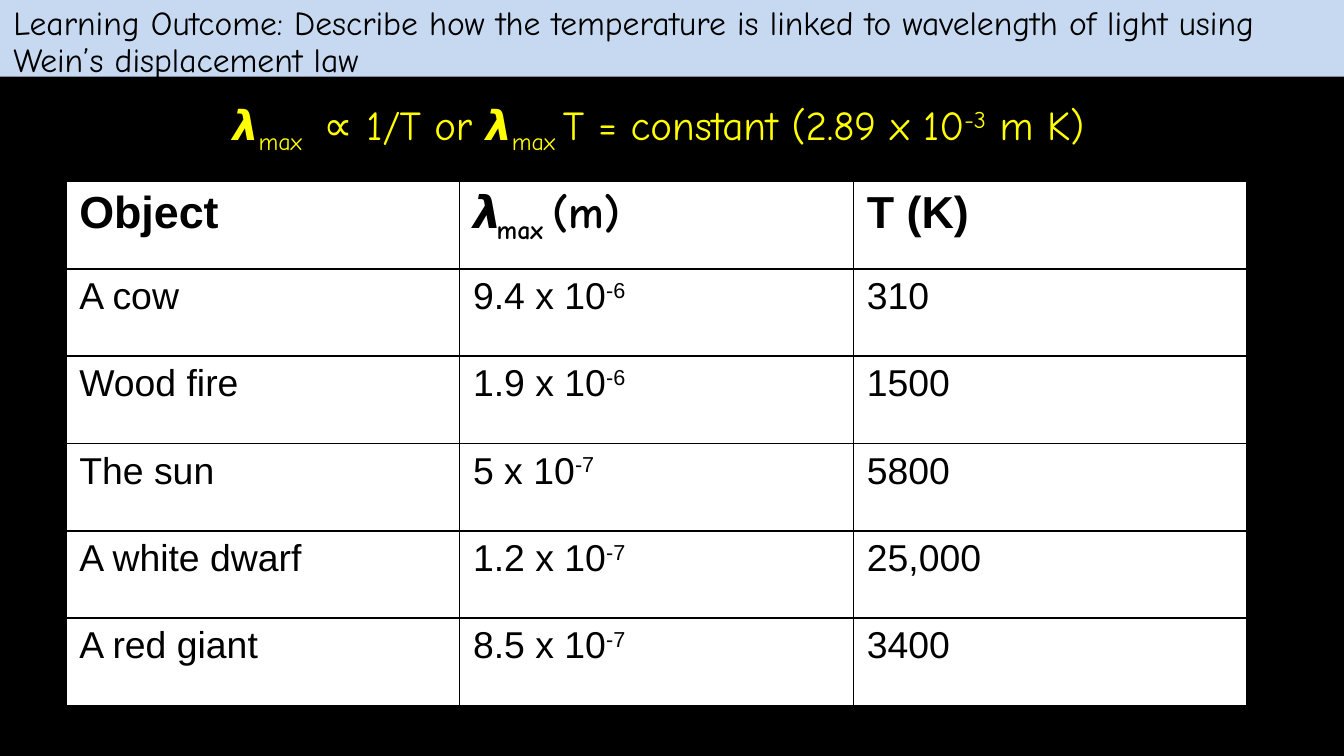
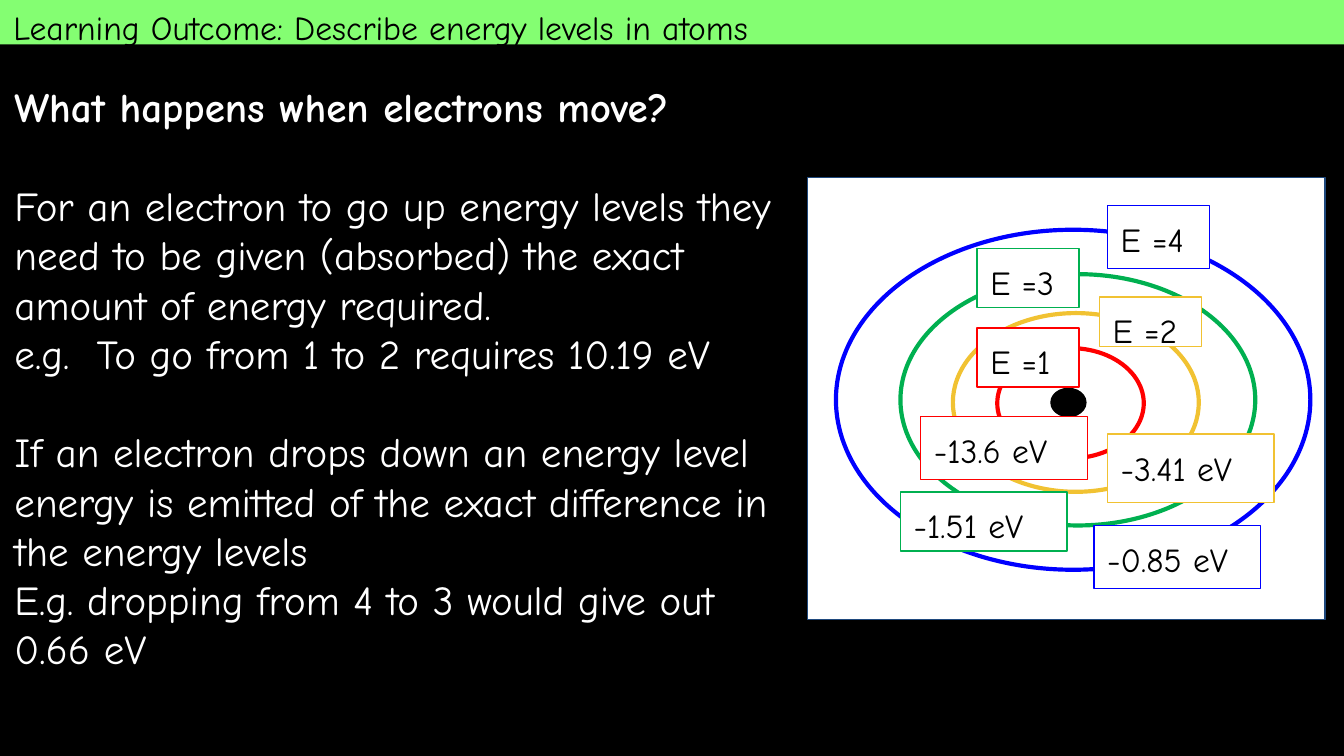
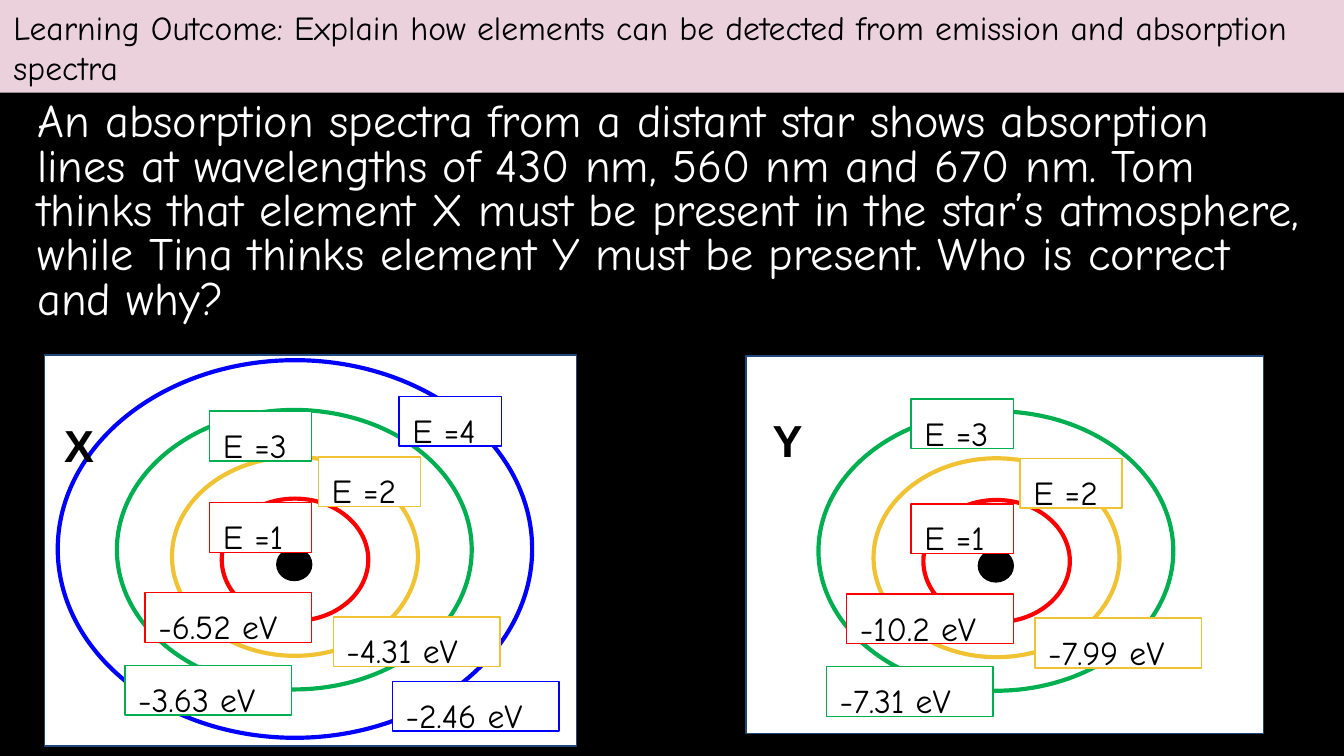
import pptx
import pptx.dml.color
import pptx.enum.shapes
import pptx.enum.text
import pptx.oxml
import pptx.oxml.ns
import pptx.util

SCALE = 9144
COMIC, ARIAL = "Comic Neue", "Arial"
BLACK, WHITE, YELLOW, NAVY = "000000", "FFFFFF", "FFFF00", "1F497D"
HUES = ["FF0000", "F1C232", "00B050", "0000FF"]
SUB, SUP = -25000, 30000
RECT = pptx.enum.shapes.MSO_SHAPE.RECTANGLE
OVAL = pptx.enum.shapes.MSO_SHAPE.OVAL
LEFT = pptx.enum.text.PP_ALIGN.LEFT
CENTER = pptx.enum.text.PP_ALIGN.CENTER

LAMBDA = [("𝞴", 0), ("max ", SUB)]
FORMULA = LAMBDA + [(" ∝ 1/T\tor 𝞴", 0), ("max ", SUB),
                    ("T = constant (2.89 x 10", 0), ("-3", SUP), (" m K)", 0)]
OBJECTS = [("A cow", "9.4", "-6", "310"), ("Wood fire", "1.9", "-6", "1500"),
           ("The sun", "5", "-7", "5800"), ("A white dwarf", "1.2", "-7", "25,000"),
           ("A red giant", "8.5", "-7", "3400")]
MOVES = [
    "What happens when electrons move?",
    "For an electron to go up energy levels they need to be given (absorbed) "
    "the exact amount of energy required.",
    "e.g.  To go from 1 to 2 requires 10.19 eV",
    "If an electron drops down an energy level energy is emitted of the exact "
    "difference in the energy levels",
    "E.g. dropping from 4 to 3 would give out 0.66 eV",
]
PUZZLE = (
    "An absorption spectra from a distant star shows absorption lines at "
    "wavelengths of 430 nm, 560 nm and 670 nm. Tom thinks that element X must "
    "be present in the star’s atmosphere, while Tina thinks element Y must be "
    "present. Who is correct and why?")

# MARK


def px(*sizes):
    return [pptx.util.Emu(size * SCALE) for size in sizes]


def hue(code):
    return pptx.dml.color.RGBColor.from_string(code)


def paint(item, code):
    item.fill.solid()
    item.fill.fore_color.rgb = hue(code)


def style(para, size, code=BLACK, face=COMIC, bold=False, align=LEFT):
    para.alignment = align
    font = para.font
    font.name, font.size, font.bold = face, pptx.util.Pt(size), bold
    font.color.rgb = hue(code)


def write(para, runs):
    for words, shift in runs:
        run = para.add_run()
        run.text = words
        if shift:
            run._r.get_or_add_rPr().set("baseline", str(shift))


def frame(shape, pad=10):
    area = shape.text_frame
    area.word_wrap = True
    area.auto_size = pptx.enum.text.MSO_AUTO_SIZE.NONE
    area.vertical_anchor = pptx.enum.text.MSO_ANCHOR.TOP
    area.margin_left, area.margin_right = px(10, 10)
    area.margin_top, area.margin_bottom = px(pad, pad)
    return area


def note(slide, box, runs, size, pad=10, **looks):
    para = frame(slide.shapes.add_textbox(*px(*box)), pad).paragraphs[0]
    write(para, runs)
    style(para, size, **looks)
    return para


def draw(slide, kind, box, line, width=0.75, fill=None):
    shape = slide.shapes.add_shape(kind, *px(*box))
    shape.shadow.inherit = False
    shape.line.color.rgb = hue(line)
    shape.line.width = pptx.util.Pt(width)
    if fill:
        paint(shape, fill)
    else:
        shape.fill.background()
    return shape


def start(deck, aim, height, code, gap=1.0):
    slide = deck.slides.add_slide(deck.slide_layouts[5])
    band = slide.shapes.title
    band.left, band.top, band.width, band.height = px(0, 0, 1000, height)
    paint(band, code)
    para = frame(band, 5).paragraphs[0]
    write(para, [("Learning Outcome: " + aim, 0)])
    style(para, 18)
    para.line_spacing = gap
    return slide


def border(cell):
    props = cell._tc.get_or_add_tcPr()
    for rank, side in enumerate(["lnL", "lnR", "lnT", "lnB"]):
        props.insert(rank, pptx.oxml.parse_xml(
            f'<a:{side} {pptx.oxml.ns.nsdecls("a")} w="12700"><a:solidFill>'
            f'<a:srgbClr val="{BLACK}"/></a:solidFill></a:{side}>'))


def grid(slide, box):
    rows = [[[("Object", 0)], LAMBDA + [("(m)", 0)], [("T (K)", 0)]]]
    for name, base, power, heat in OBJECTS:
        rows.append([[(name, 0)], [(base + " x 10", 0), (power, SUP)], [(heat, 0)]])
    table = slide.shapes.add_table(len(rows), 3, *px(*box)).table
    table.first_row = table.horz_banding = False
    for r, row in enumerate(rows):
        for c, runs in enumerate(row):
            cell = table.cell(r, c)
            paint(cell, WHITE)
            border(cell)
            para = cell.text_frame.paragraphs[0]
            write(para, runs)
            head = r == 0
            style(para, 24 if head else 20, bold=head,
                  face=COMIC if head and c == 1 else ARIAL)


def label(slide, box, words, line):
    para = frame(draw(slide, RECT, box, line, fill=WHITE)).paragraphs[0]
    write(para, [(words, 0)])
    style(para, 18)


def atom(slide, box, core, levels, powers):
    left, top, _, _ = box

    def place(x, y, wide, high):
        return left + x, top + y, wide, high

    draw(slide, RECT, box, NAVY, fill=WHITE)
    draw(slide, OVAL, place(*core), BLACK, fill=BLACK)
    shells = list(zip(levels, powers, HUES))
    for (ring, _, _), _, line in shells:
        draw(slide, OVAL, place(*ring), line, 2.25)
    for rank, ((_, tag, mark), power, line) in enumerate(shells, 1):
        x, y, high = tag
        label(slide, place(x, y, 76, high), f"E ={rank}", line)
        x, y, high = mark
        label(slide, place(x, y, 124, high), f"{power} eV", line)


def wien(deck):
    slide = start(deck, "Describe how the temperature is linked to wavelength of "
                  "light using Wein’s displacement law", 57, "C6D9F1", 0.9)
    note(slide, (20, 64, 940, 37), FORMULA, 22, code=YELLOW, align=CENTER)
    grid(slide, (49, 135, 879, 390))


def jumps(deck):
    slide = start(deck, "Describe energy levels in atoms", 33, "84FE72")
    area = frame(slide.shapes.add_textbox(*px(1, 51, 600, 473)))
    for rank, words in enumerate(MOVES):
        para = area.add_paragraph() if rank else area.paragraphs[0]
        write(para, [(words, 0)])
        style(para, 22, WHITE, bold=rank == 0)
        if rank in (1, 3):
            para.space_before = pptx.util.Pt(26.4)
    levels = [
        ((141, 127, 109, 82), (126, 112, 44), (84, 178, 47)),
        ((108, 101, 183, 133), (217, 89, 37), (223, 191, 51)),
        ((69, 72, 264, 187), (126, 53, 44), (69, 234, 44)),
        ((21, 39, 353, 253), (223, 21, 47), (213, 259, 47)),
    ]
    atom(slide, (601, 132, 385, 329), (181, 157, 26, 21), levels,
         ["-13.6", "-3.41", "-1.51", "-0.85"])


def stars(deck):
    slide = start(deck, "Explain how elements can be detected from emission and "
                  "absorption spectra", 69, "EAD1DC")
    para = note(slide, (18, 71, 963, 168), [(PUZZLE, 0)], 24.8, 5, code=WHITE)
    para.line_spacing = 0.8
    core = (173, 144, 26, 24)
    inner = [
        ((132, 107, 109, 91), (123, 110, 37), (75, 177, 37)),
        ((95, 76, 183, 148), (204, 76, 37), (215, 195, 37)),
    ]
    ring, mark = (54, 41, 264, 208), (60, 231, 37)
    outer = ((10, 4, 353, 281), (264, 31, 37), (259, 243, 37))
    atom(slide, (33, 264, 396, 291), core,
         inner + [(ring, (123, 42, 37), mark), outer],
         ["-6.52", "-4.31", "-3.63", "-2.46"])
    atom(slide, (555, 265, 385, 281), core,
         inner + [(ring, (123, 32, 37), mark)],
         ["-10.2", "-7.99", "-7.31"])
    for name, x, y in [("X", 38, 301), ("Y", 565, 297)]:
        note(slide, (x, y, 76, 53), [(name, 0)], 24, face=ARIAL, bold=True)


def main():
    deck = pptx.Presentation()
    deck.slide_width = px(1000)[0]
    deck.slide_height = deck.slide_width * 9 // 16
    paint(deck.slide_master.background, BLACK)
    for build in (wien, jumps, stars):
        build(deck)
    deck.save("out.pptx")


if __name__ == "__main__":
    main()
